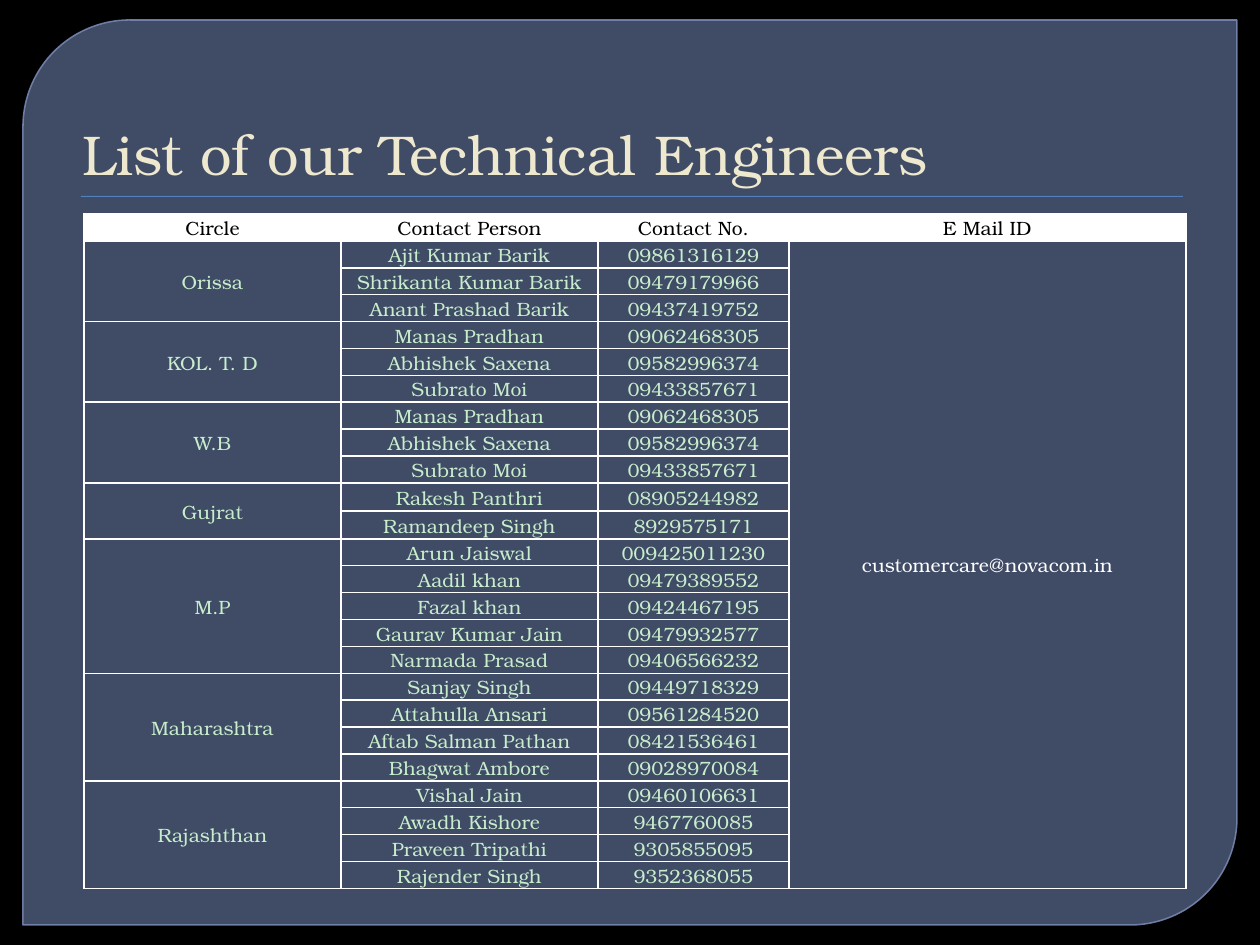
from pptx import Presentation
from pptx.dml.color import RGBColor as Rgb
from pptx.enum.shapes import MSO_SHAPE as Shape
from pptx.enum.text import MSO_ANCHOR as Anchor, MSO_AUTO_SIZE as Fit, PP_ALIGN as Align
from pptx.oxml import parse_xml
from pptx.oxml.ns import nsdecls, qn
from pptx.util import Pt

PX = 9144000 // 1260
THEME = {
    "font": "TeX Gyre Bonum", "title_size": 32, "cell_size": 11,
    "back": "000000", "panel": "63759D", "edge": "7989B3", "rule": "4F81BD",
    "title": "EDE8CE", "head": "000000", "body": "C7EDCC", "grid": "FFFFFF",
}
STAFF = [
    ("Orissa", [("Ajit Kumar Barik", "09861316129"),
                ("Shrikanta Kumar Barik", "09479179966"),
                ("Anant Prashad Barik", "09437419752")]),
    ("KOL. T. D", [("Manas Pradhan", "09062468305"),
                   ("Abhishek Saxena", "09582996374"),
                   ("Subrato Moi", "09433857671")]),
    ("W.B", [("Manas Pradhan", "09062468305"),
             ("Abhishek Saxena", "09582996374"),
             ("Subrato Moi", "09433857671")]),
    ("Gujrat", [("Rakesh Panthri", "08905244982"),
                ("Ramandeep Singh", "8929575171")]),
    ("M.P", [("Arun Jaiswal", "009425011230"),
             ("Aadil khan", "09479389552"),
             ("Fazal khan", "09424467195"),
             ("Gaurav Kumar Jain", "09479932577"),
             ("Narmada Prasad", "09406566232")]),
    ("Maharashtra", [("Sanjay Singh", "09449718329"),
                     ("Attahulla Ansari", "09561284520"),
                     ("Aftab Salman Pathan", "08421536461"),
                     ("Bhagwat Ambore", "09028970084")]),
    ("Rajashthan", [("Vishal Jain", "09460106631"),
                    ("Awadh Kishore", "9467760085"),
                    ("Praveen Tripathi", "9305855095"),
                    ("Rajender Singh", "9352368055")]),
]
HEADS = ["Circle", "Contact Person", "Contact No.", "E Mail ID"]
MAIL = "customercare@novacom.in"
WIDTHS = [257, 257, 191, 397]
ROW = 26


def style(font, size, color):
    for key, val in {"name": THEME["font"], "size": Pt(THEME[size])}.items():
        setattr(font, key, val)
    font.color.rgb = Rgb.from_string(THEME[color])


def write(cell, text, color):
    cell.text = text
    cell.vertical_anchor = Anchor.MIDDLE
    para = cell.text_frame.paragraphs[0]
    para.alignment = Align.CENTER
    style(para.runs[0].font, "cell_size", color)


deck = Presentation()
deck.slide_width, deck.slide_height = 1260 * PX, 945 * PX
slide = deck.slides.add_slide(deck.slide_layouts[5])
shapes = slide.shapes
slide.background.fill.solid()
slide.background.fill.fore_color.rgb = Rgb.from_string(THEME["back"])

# Rounded panel with a see-through fill and edge
panel = shapes.add_shape(Shape.ROUND_2_DIAG_RECTANGLE, 23 * PX, 20 * PX, 1214 * PX, 905 * PX)
panel.adjustments[0] = 0.118
panel.shadow.inherit = False
panel.fill.solid()
panel.line.width = Pt(0.87)
for fill, name, alpha in [(panel.fill, "panel", 65), (panel.line.fill, "edge", 88)]:
    fill.solid()
    fill.fore_color.rgb = Rgb.from_string(THEME[name])
for color, alpha in zip(panel.element.spPr.iter(qn("a:srgbClr")), [65, 88]):
    color.append(parse_xml(f'<a:alpha {nsdecls("a")} val="{alpha * 1000}"/>'))

# Rule under the title
rule = shapes.add_shape(Shape.RECTANGLE, 81 * PX, 196 * PX, 1102 * PX, PX)
rule.fill.solid()
rule.fill.fore_color.rgb = Rgb.from_string(THEME["rule"])
rule.line.fill.background()
rule.shadow.inherit = False
rule.element.spPr.find(qn("a:effectLst")).append(parse_xml(
    f'<a:outerShdw {nsdecls("a")} blurRad="12700" dist="12700" dir="5400000">'
    '<a:srgbClr val="000000"><a:alpha val="75000"/></a:srgbClr></a:outerShdw>'))

# Title, brought in front of the panel
title = shapes.title
title.element.getparent().append(title.element)
for key, val in {"left": 63, "top": 35, "width": 1134, "height": 158}.items():
    setattr(title, key, val * PX)
frame = title.text_frame
frame.text = "List of our Technical Engineers"
for key, val in {"vertical_anchor": Anchor.BOTTOM, "word_wrap": True,
                 "auto_size": Fit.NONE, "margin_left": 20 * PX}.items():
    setattr(frame, key, val)
para = frame.paragraphs[0]
para.alignment = Align.LEFT
style(para.runs[0].font, "title_size", "title")

# Table grid
count = 1 + sum(len(people) for _, people in STAFF)
table = shapes.add_table(count, len(HEADS), 84 * PX, 214 * PX,
                         sum(WIDTHS) * PX, count * ROW * PX).table
table.first_row = table.horz_banding = False
for col, width in zip(table.columns, WIDTHS):
    col.width = width * PX
for i, row in enumerate(table.rows):
    row.height = ROW * PX
    for cell in row.cells:
        for key, val in {"left": 1, "right": 1, "top": 1, "bottom": 0}.items():
            setattr(cell, "margin_" + key, val * PX)
        if i == 0:
            cell.fill.solid()
            cell.fill.fore_color.rgb = Rgb.from_string(THEME["grid"])
        else:
            cell.fill.background()
        props = cell._tc.get_or_add_tcPr()
        for n, side in enumerate("LRTB"):
            props.insert(n, parse_xml(
                f'<a:ln{side} {nsdecls("a")} w="12700"><a:solidFill>'
                f'<a:srgbClr val="{THEME["grid"]}"/></a:solidFill></a:ln{side}>'))

# Table wording, one merged circle cell per group
for n, head in enumerate(HEADS):
    write(table.cell(0, n), head, "head")
top = 1
for circle, people in STAFF:
    table.cell(top, 0).merge(table.cell(top + len(people) - 1, 0))
    write(table.cell(top, 0), circle, "body")
    for i, (person, phone) in enumerate(people, top):
        write(table.cell(i, 1), person, "body")
        write(table.cell(i, 2), phone, "body")
    if circle == "Gujrat":
        for i in range(top, top + len(people)):
            table.rows[i].height = 28 * PX
    top += len(people)
table.cell(1, 3).merge(table.cell(count - 1, 3))
write(table.cell(1, 3), MAIL, "grid")

deck.save("out.pptx")
